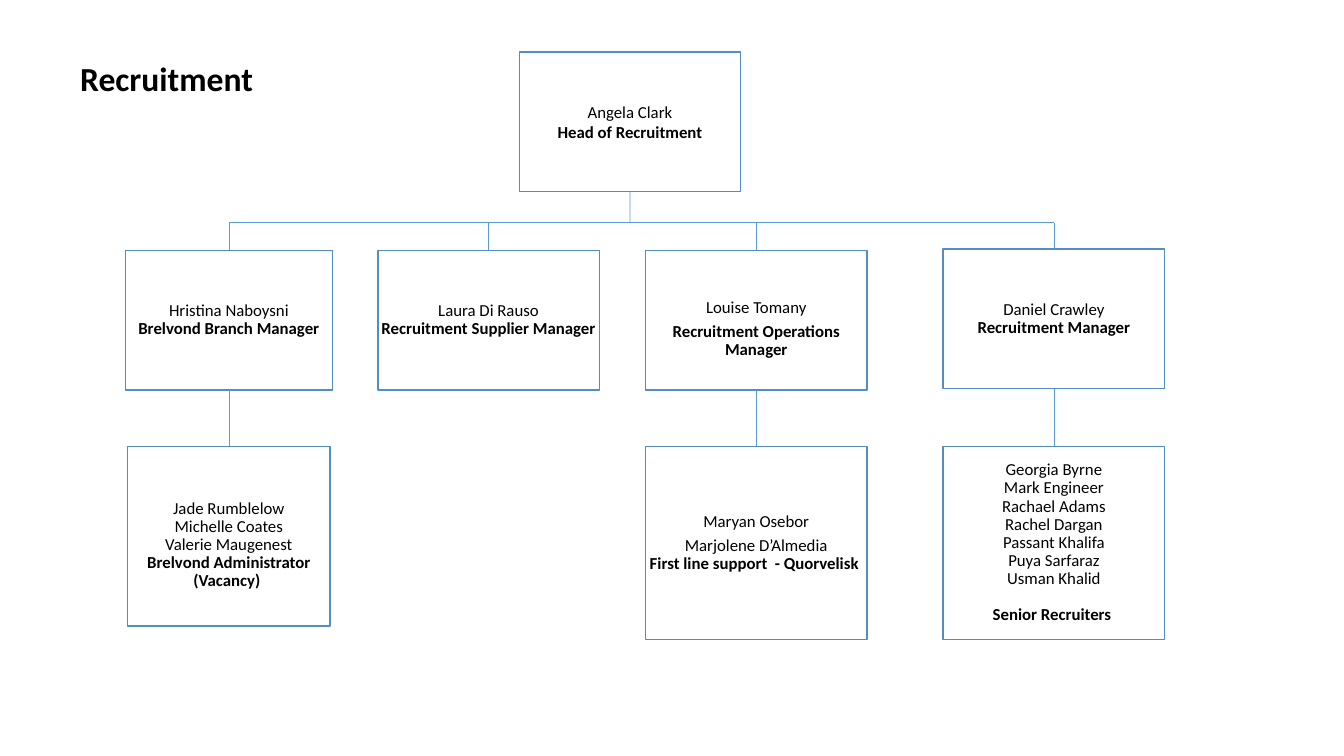
from lxml import etree
from pptx import Presentation
from pptx.dml.color import RGBColor
from pptx.enum.shapes import MSO_CONNECTOR as CONN, MSO_SHAPE as SHAPE
from pptx.enum.text import MSO_ANCHOR as ANCHOR, PP_ALIGN as ALIGN
from pptx.oxml.ns import qn
from pptx.util import Pt

# Content: each paragraph is (plain lines, bold lines)
TITLE = "Recruitment"
TEXTS = {
    "head": [(["Angela Clark"], []), ([], ["Head of Recruitment"])],
    "branch": [(["Hristina Naboysni"], ["Brelvond Branch Manager"])],
    "supplier": [(["Laura Di Rauso"], ["Recruitment Supplier Manager"])],
    "operations": [(["Louise Tomany"], []),
                   ([], ["Recruitment Operations Manager"])],
    "manager": [(["Daniel Crawley"], ["Recruitment Manager"])],
    "admins": [(["Jade Rumblelow", "Michelle Coates", "Valerie Maugenest"],
                ["Brelvond Administrator (Vacancy) "])],
    "support": [(["Maryan Osebor"], []),
                (["Marjolene D’Almedia"], ["First line support  - Quorvelisk "])],
    "recruiters": [(["Georgia Byrne", "Mark Engineer", "Rachael Adams",
                     "Rachel Dargan", "Passant Khalifa"], []),
                   (["Puya Sarfaraz", "Usman Khalid"], []),
                   ([], ["Senior Recruiters "])],
}

# Layout: centre x, top, width, height
WIDE, CARD_H, ROW_2, ROW_3 = 158.2, 99.7, 178.8, 318.8
BOXES = {
    "head": (450, 37.2, WIDE, CARD_H),
    "branch": (163.5, ROW_2, 148, CARD_H),
    "supplier": (349, ROW_2, WIDE, CARD_H),
    "operations": (540.2, ROW_2, WIDE, CARD_H),
    "manager": (752.8, 177.9, WIDE, CARD_H),
    "admins": (163.5, ROW_3, 144.8, 128.3),
    "support": (540.2, ROW_3, WIDE, 138),
    "recruiters": (752.8, ROW_3, WIDE, 138),
}
MANAGERS = ["branch", "supplier", "operations", "manager"]
TEAMS = {"branch": "admins", "operations": "support", "manager": "recruiters"}
BUS_Y, INSET, LINE_H = 159, 0.7, 13
LOWERED = {"operations", "admins"}  # text sits half a line below the middle
SPACE_AFTER = {"head": 0, "recruiters": 0}
COLORS = {"text": "000000", "fill": "FFFFFF", "border": "538DC1", "link": "5B9BD5"}


def rgb(name):
    return RGBColor.from_string(COLORS[name])


def style(font, size, bold):
    for key, value in {"name": "Calibri", "size": Pt(size), "bold": bold}.items():
        setattr(font, key, value)
    font.color.rgb = rgb("text")


def write(p, plain, bold):
    lines = [(t, False) for t in plain] + [(t, True) for t in bold]
    for i, (text, is_bold) in enumerate(lines):
        if i:
            p.add_line_break()
        r = p.add_run()
        r.text = text
        style(r.font, 12, is_bold)


def add_box(name):
    cx, top, w, h = BOXES[name]
    s = shapes.add_shape(SHAPE.RECTANGLE, Pt(cx - w / 2), Pt(top), Pt(w), Pt(h))
    s.shadow.inherit = False
    s.fill.solid()
    s.fill.fore_color.rgb = rgb("fill")
    s.line.color.rgb = rgb("border")
    s.line.width = Pt(1)
    tf = s.text_frame
    top_inset = INSET + (LINE_H if name in LOWERED else 0)
    for key, value in {"word_wrap": True, "vertical_anchor": ANCHOR.MIDDLE,
                       "margin_left": Pt(INSET), "margin_right": Pt(INSET),
                       "margin_top": Pt(top_inset),
                       "margin_bottom": Pt(INSET)}.items():
        setattr(tf, key, value)
    for i, (plain, bold) in enumerate(TEXTS[name]):
        p = tf.add_paragraph() if i else tf.paragraphs[0]
        p.alignment = ALIGN.CENTER
        p.line_spacing = 1.0 if name == "head" else 0.9
        p.space_after = Pt(SPACE_AFTER.get(name, 4.2))
        if name == "recruiters" and bold:
            p.space_before = Pt(LINE_H)
        write(p, plain, bold)
    return s


def add_link(x1, y1, x2, y2, start=None, end=None):
    c = shapes.add_connector(CONN.STRAIGHT, Pt(x1), Pt(y1), Pt(x2), Pt(y2))
    c.line.color.rgb = rgb("link")
    c.line.width = Pt(0.5)
    etree.SubElement(c._element.spPr, qn("a:effectLst"))
    if start is not None:
        c.begin_connect(start, 2)
    if end is not None:
        c.end_connect(end, 0)


def bottom(name):
    return BOXES[name][1] + BOXES[name][3]


prs = Presentation()
prs.slide_width, prs.slide_height = Pt(960), Pt(540)
slide = prs.slides.add_slide(prs.slide_layouts[5])
shapes = slide.shapes

# Title
title = shapes.title
title.left, title.top, title.width, title.height = Pt(50), Pt(29), Pt(140), Pt(57)
title.text_frame.text = TITLE
title.text_frame.vertical_anchor = ANCHOR.MIDDLE
p = title.text_frame.paragraphs[0]
p.alignment, p.line_spacing = ALIGN.LEFT, 0.9
style(p.runs[0].font, 24, True)

# Boxes
cards = {name: add_box(name) for name in BOXES}

# Links: head to bus, bus to managers, managers to teams
head_x = BOXES["head"][0]
add_link(head_x, bottom("head"), head_x, BUS_Y, start=cards["head"])
add_link(BOXES[MANAGERS[0]][0], BUS_Y, BOXES[MANAGERS[-1]][0], BUS_Y)
for name in MANAGERS:
    x, top = BOXES[name][:2]
    add_link(x, BUS_Y, x, top, end=cards[name])
for name, team in TEAMS.items():
    x = BOXES[name][0]
    add_link(x, bottom(name), x, ROW_3, cards[name], cards[team])

prs.save("out.pptx")
